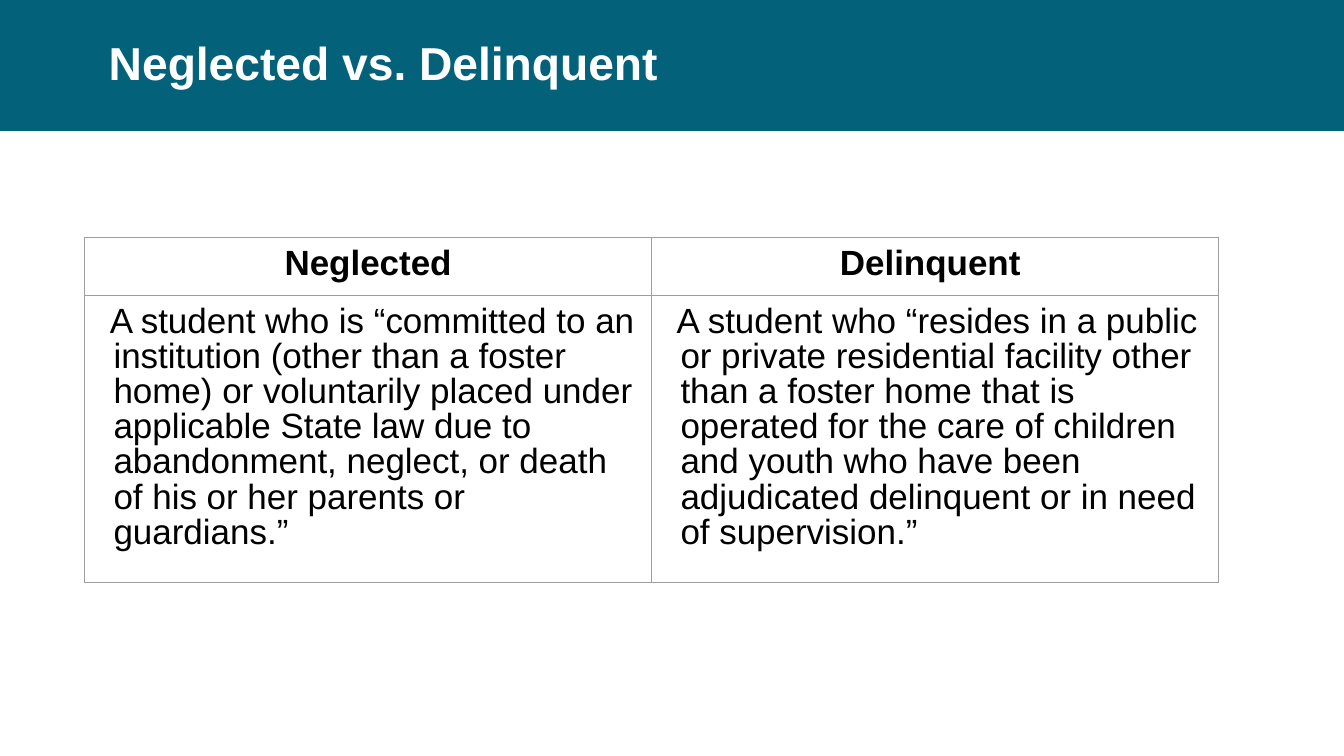
"""Build the slide that compares neglected and delinquent students."""
from dataclasses import dataclass

from lxml import etree
from pptx import Presentation
from pptx.dml.color import RGBColor
from pptx.enum.shapes import MSO_SHAPE
from pptx.enum.text import MSO_ANCHOR, PP_ALIGN
from pptx.oxml.ns import qn
from pptx.util import Pt

RECTANGLE = MSO_SHAPE.RECTANGLE
MIDDLE = MSO_ANCHOR.MIDDLE
TOP = MSO_ANCHOR.TOP
LEFT = PP_ALIGN.LEFT
CENTER = PP_ALIGN.CENTER

FONT = "Arial"
TEAL, WHITE, BLACK, GRAY = "03617A", "FFFFFF", "000000", "9E9E9E"
BANNER_HEIGHT = 93.6
COLUMN_WIDTH = 405
ROW_HEIGHTS = (41.8, 205.2)
CELL_MARGIN = 7.2
BORDER_WIDTH = 0.75


@dataclass(frozen=True)
class Definition:
    term: str
    meaning: str


DEFINITIONS = (
    Definition(
        "Neglected",
        "A student who is “committed to an institution (other than a foster home) "
        "or voluntarily placed under applicable State law due to abandonment, "
        "neglect, or death of his or her parents or guardians.”",
    ),
    Definition(
        "Delinquent ",
        "A student who “resides in a public or private residential facility other "
        "than a foster home that is operated for the care of children and youth "
        "who have been adjudicated delinquent or in need of supervision.”",
    ),
)


def color(value: str) -> RGBColor:
    return RGBColor.from_string(value)


def write(frame, text: str, *, size: float, fill: str = BLACK, bold: bool = False,
          align=LEFT, margin: float = 0, indent: float = 0) -> None:
    frame.word_wrap = True
    para = frame.paragraphs[0]
    para.alignment = align
    para.line_spacing = 0.9
    properties = para._p.get_or_add_pPr()
    properties.set("marL", str(Pt(margin)))
    properties.set("indent", str(Pt(indent)))
    span = para.add_run()
    span.text = text
    span.font.name = FONT
    span.font.size = Pt(size)
    span.font.bold = bold
    span.font.color.rgb = color(fill)


def draw_borders(cell) -> None:
    properties = cell._tc.get_or_add_tcPr()
    for position, side in enumerate(("a:lnL", "a:lnR", "a:lnT", "a:lnB")):
        line = etree.Element(qn(side), w=str(Pt(BORDER_WIDTH)))
        solid = etree.SubElement(line, qn("a:solidFill"))
        etree.SubElement(solid, qn("a:srgbClr"), val=GRAY)
        properties.insert(position, line)


def format_cell(cell) -> None:
    cell.margin_left = cell.margin_right = Pt(CELL_MARGIN)
    cell.margin_top = cell.margin_bottom = Pt(CELL_MARGIN)
    cell.vertical_anchor = TOP
    cell.fill.background()
    draw_borders(cell)


def add_banner(page, width: int) -> None:
    banner = page.shapes.add_shape(RECTANGLE, 0, 0, width, Pt(BANNER_HEIGHT))
    banner.shadow.inherit = False
    banner.fill.solid()
    banner.fill.fore_color.rgb = color(TEAL)
    banner.line.fill.background()
    box = page.shapes.add_textbox(Pt(70.6), 0, Pt(828), Pt(BANNER_HEIGHT))
    box.text_frame.vertical_anchor = MIDDLE
    write(box.text_frame, "Neglected vs. Delinquent", size=33, fill=WHITE, bold=True)


def add_definitions(page, definitions: tuple[Definition, ...]) -> None:
    count = len(definitions)
    table = page.shapes.add_table(
        len(ROW_HEIGHTS), count, Pt(60.4), Pt(169.3),
        Pt(COLUMN_WIDTH * count), Pt(sum(ROW_HEIGHTS)),
    ).table
    table.horz_banding = False
    for row, height in zip(table.rows, ROW_HEIGHTS):
        row.height = Pt(height)
    for index, definition in enumerate(definitions):
        table.columns[index].width = Pt(COLUMN_WIDTH)
        heading, body = table.cell(0, index), table.cell(1, index)
        format_cell(heading)
        format_cell(body)
        write(heading.text_frame, definition.term, size=25, bold=True, align=CENTER)
        write(body.text_frame, definition.meaning, size=25, margin=13.5, indent=-2.7)


def main() -> None:
    deck = Presentation()
    deck.slide_width, deck.slide_height = Pt(960), Pt(540)
    page = deck.slides.add_slide(deck.slide_layouts[6])
    add_banner(page, deck.slide_width)
    add_definitions(page, DEFINITIONS)
    deck.save("out.pptx")


if __name__ == "__main__":
    main()
